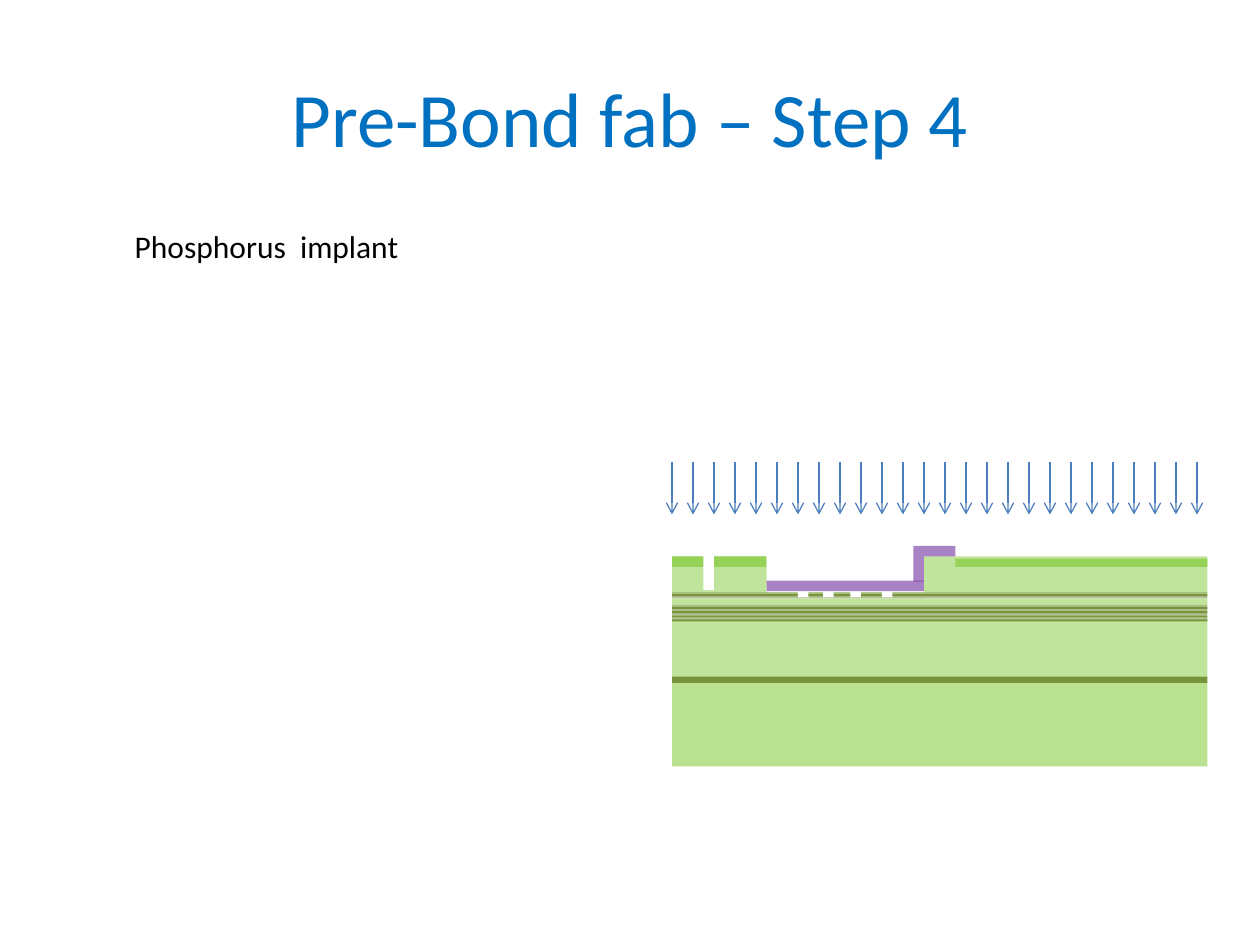
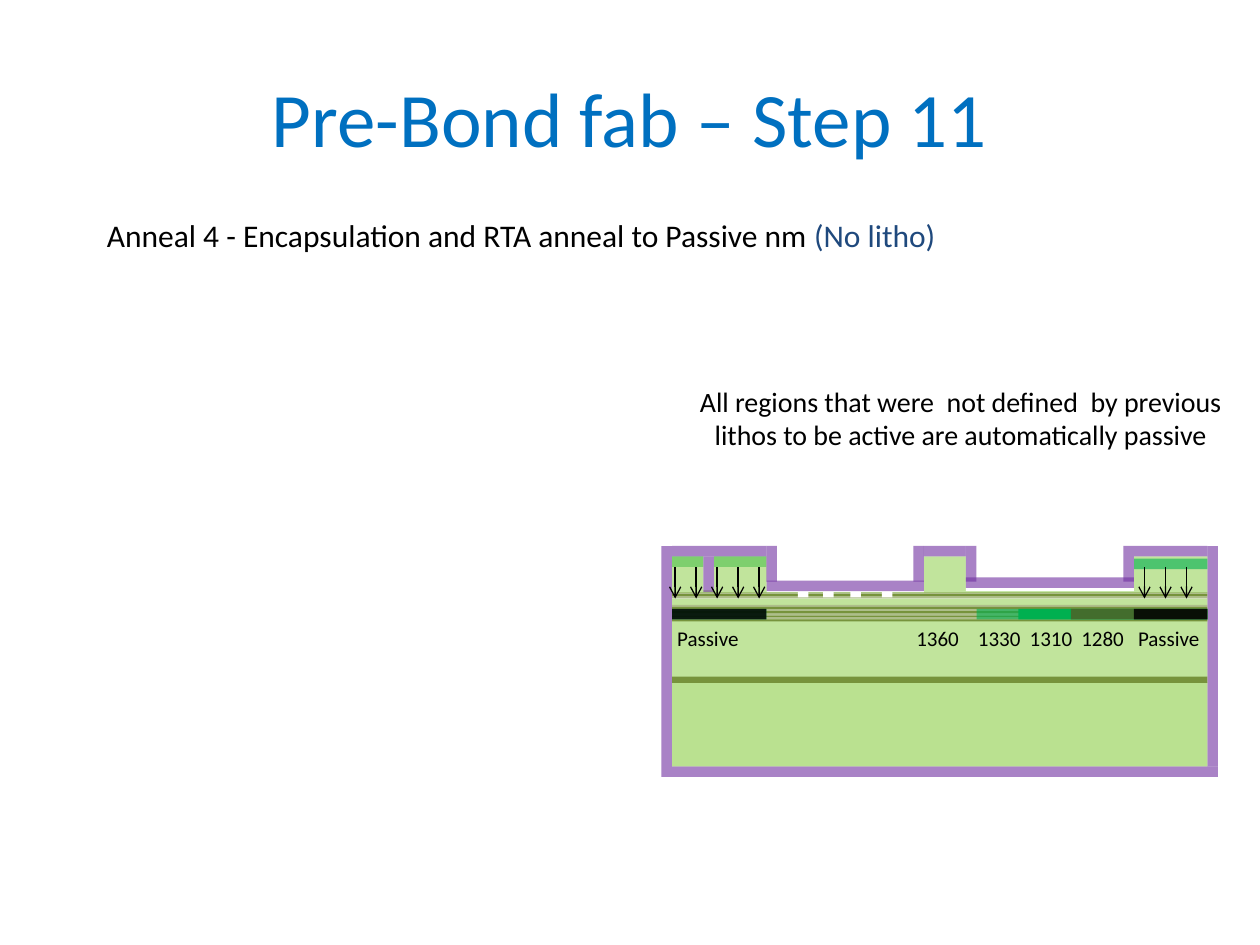
from lxml import etree
from pptx import Presentation
from pptx.dml.color import RGBColor
from pptx.enum.shapes import MSO_CONNECTOR, MSO_SHAPE
from pptx.enum.text import MSO_ANCHOR, PP_ALIGN
from pptx.oxml.ns import qn
from pptx.util import Inches, Pt

RECT = MSO_SHAPE.RECTANGLE
STRAIGHT = MSO_CONNECTOR.STRAIGHT
LEFT, CENTER = PP_ALIGN.LEFT, PP_ALIGN.CENTER
TOP, MIDDLE = MSO_ANCHOR.TOP, MSO_ANCHOR.MIDDLE

FONT = "Calibri"
TITLE_BLUE = RGBColor(0x00, 0x70, 0xC0)
NOTE_BLUE = RGBColor(0x1F, 0x49, 0x7D)
ARROW_BLUE = RGBColor(0x4B, 0x7E, 0xBC)
BLACK = RGBColor(0x00, 0x00, 0x00)
WHITE = RGBColor(0xFF, 0xFF, 0xFF)
LIME = RGBColor(0x92, 0xD0, 0x50)
OLIVE = RGBColor(0x77, 0x93, 0x3C)
MOSS = RGBColor(0x4F, 0x62, 0x28)
GREEN = RGBColor(0x00, 0xB0, 0x50)
PURPLE = RGBColor(0x70, 0x30, 0xA0)

CELLS_PER_INCH = 12
WAFER_X, WAFER_W = 64, 51
MESA_W = 9
WELL_ROW = 58


def grid(cells):
    return Inches(cells / CELLS_PER_INCH)


class Deck:
    def __init__(self):
        self.prs = Presentation()
        self.prs.slide_width = grid(120)
        self.prs.slide_height = grid(90)

    def new_slide(self, title):
        self.s = self.prs.slides.add_slide(self.prs.slide_layouts[6])
        self.text(6, 3.6, 108, 15, [(title, TITLE_BLUE)], 44, CENTER, MIDDLE)

    def text(self, x, y, w, h, parts, size, align=LEFT, anchor=TOP, tabs=()):
        sp = self.s.shapes.add_textbox(grid(x), grid(y), grid(w), grid(h))
        tf = sp.text_frame
        tf.word_wrap = True
        tf.vertical_anchor = anchor
        p = tf.paragraphs[0]
        p.alignment = align
        for wording, color in parts:
            r = p.add_run()
            r.text = wording
            r.font.name = FONT
            r.font.size = Pt(size)
            r.font.color.rgb = color
        if tabs:
            tab_list = etree.SubElement(p._p.get_or_add_pPr(), qn("a:tabLst"))
            for stop in tabs:
                etree.SubElement(tab_list, qn("a:tab"), pos=str(Inches(stop)), algn="l")

    def rect(self, x, y, w, h, color, opacity=100):
        sp = self.s.shapes.add_shape(RECT, grid(x), grid(y), grid(w), grid(h))
        sp.shadow.inherit = False
        sp.line.fill.background()
        sp.fill.solid()
        sp.fill.fore_color.rgb = color
        if opacity < 100:
            clr = sp._element.spPr.find(qn("a:solidFill"))[0]
            etree.SubElement(clr, qn("a:alpha"), val=str(opacity * 1000))

    def layer(self, y, h, color, opacity=100):
        self.rect(WAFER_X, y, WAFER_W, h, color, opacity)

    def film(self, x, y, w, h=1):
        self.rect(x, y, w, h, PURPLE, 60)

    def wall(self, x, y=52, h=3.4):
        self.film(x, y, 1, h)

    def well(self, x, w, color, opacity=100):
        self.rect(x, WELL_ROW, w, 1, color, opacity)

    def stripes(self, y, count):
        for i in range(count):
            self.layer(y + 0.2 * i, 0.2, OLIVE, 100 if i % 2 else 60)

    def arrows(self, x, count, top, bottom, color):
        for i in range(count):
            col = grid(x + 2 * i)
            c = self.s.shapes.add_connector(STRAIGHT, col, grid(top), col, grid(bottom))
            c.line.color.rgb = color
            c.line.width = Pt(0.75)
            etree.SubElement(c.line._get_or_add_ln(), qn("a:tailEnd"), type="arrow")
            etree.SubElement(c._element.spPr, qn("a:effectLst"))

    def wafer(self, implant, implant_opacity, cap_film_w):
        self.rect(WAFER_X, 53, MESA_W, 1, implant, implant_opacity)
        self.layer(65, 8, LIME, 63)
        self.layer(59, 5.5, LIME, 56)
        self.layer(64.45, 0.6, OLIVE)
        self.stripes(57.6, 8)
        self.layer(57, 0.6, LIME, 56)
        self.stripes(56.4, 3)
        self.layer(53, 3.45, LIME, 56)
        self.rect(67, 52, 1, 4.2, WHITE)
        self.rect(73, 52.2, 15, 4.2, WHITE)
        for x in (76, 78.4, 81, 84):
            self.rect(x, 52.7, 1, 4.2, WHITE)
        self.film(88, 52, cap_film_w)
        self.film(73, 55.3, 15)
        self.wall(87)


def implant_slide(deck):
    deck.new_slide("Pre-Bond fab – Step 4")
    deck.text(11.65, 21, 106, 4.8, [("Phosphorus  implant", BLACK)], 18)
    deck.wafer(LIME, 89, 3)
    deck.rect(91, 53.2, 24, 0.8, LIME, 89)
    deck.arrows(WAFER_X, 26, 44, 49, ARROW_BLUE)


def anneal_slide(deck):
    deck.new_slide("Pre-Bond fab – Step 11")
    deck.text(9, 20, 106, 4.8, [
        ("Anneal 4 - Encapsulation and RTA anneal to Passive nm ", BLACK),
        ("(No litho)", NOTE_BLUE)], 18)
    deck.text(63, 36, 57, 7.7, [
        ("All regions that were  not defined  by previous lithos "
         "to be active are automatically passive", BLACK)], 16, CENTER)

    deck.film(WAFER_X, 73, 52)
    deck.wall(63, 52, 22)
    deck.wall(115, 52, 21)
    deck.wafer(GREEN, 60, 7)
    deck.rect(95, 53.2, 20, 1, GREEN, 60)
    deck.film(103, 52, 12)
    deck.film(WAFER_X, 52, MESA_W)
    deck.wall(73)
    deck.wall(67, 53)

    deck.well(93, 22, GREEN, 60)
    deck.well(97, 18, GREEN)
    deck.well(102, 13, MOSS, 85)
    deck.well(108, 7, BLACK, 85)
    deck.well(WAFER_X, MESA_W, GREEN, 60)
    deck.well(WAFER_X, MESA_W, BLACK, 85)

    deck.rect(92, 51, 16, 5.3, WHITE)
    deck.film(92, 55, 16)
    deck.wall(92)
    deck.wall(107)
    deck.arrows(64.3, 5, 54, 57, BLACK)
    deck.arrows(109, 3, 54, 57, BLACK)

    deck.text(62, 59, 11, 3.6, [("\tPassive", BLACK)], 12, tabs=(0.11,))
    deck.text(82, 59, 34, 3.6, [("\t1360\t1330\t1310\t1280\tPassive", BLACK)], 12,
              tabs=(0.34, 0.83, 1.24, 1.65, 2.1))


def main():
    deck = Deck()
    implant_slide(deck)
    anneal_slide(deck)
    deck.prs.save("out.pptx")


if __name__ == "__main__":
    main()
